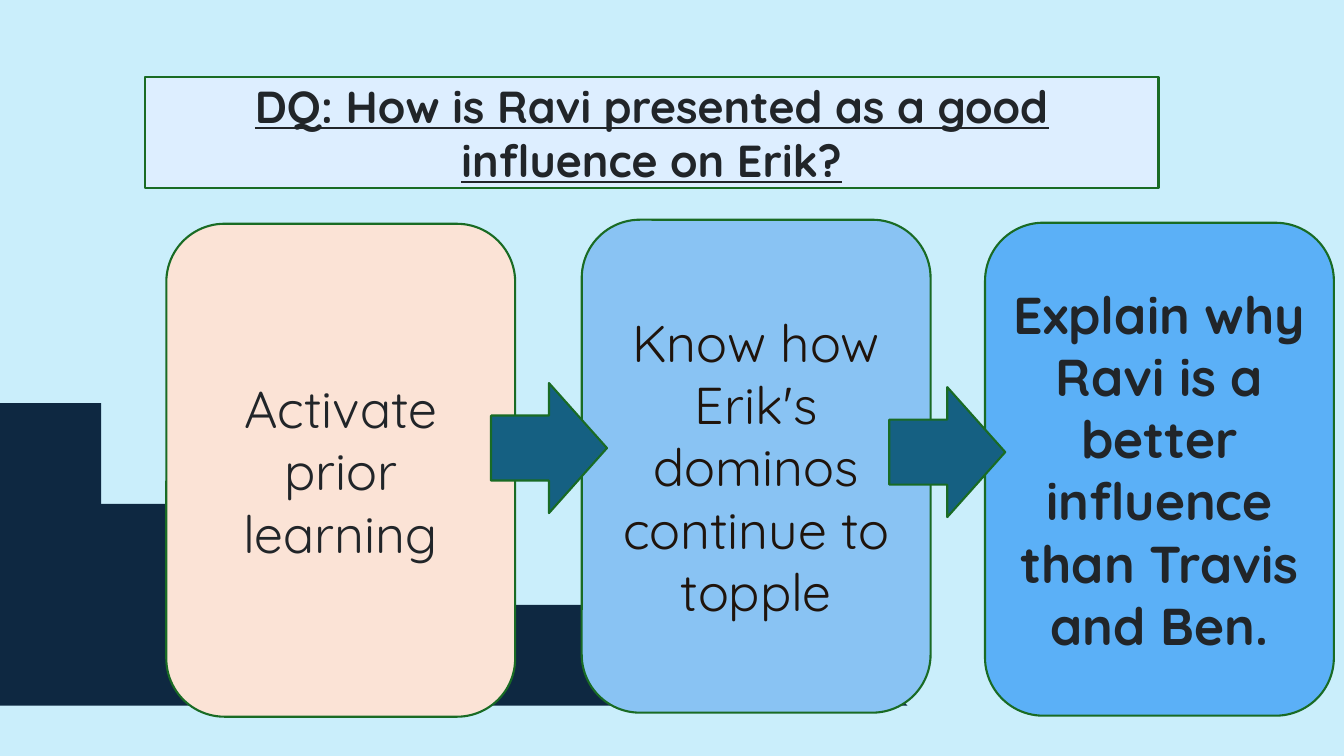
from dataclasses import dataclass

from pptx import Presentation
from pptx.dml.color import RGBColor
from pptx.enum.shapes import MSO_SHAPE
from pptx.enum.text import MSO_ANCHOR, MSO_AUTO_SIZE, PP_ALIGN
from pptx.util import Inches, Pt

ROUNDED, ARROW = MSO_SHAPE.ROUNDED_RECTANGLE, MSO_SHAPE.RIGHT_ARROW
MIDDLE, CENTER, NO_FIT = MSO_ANCHOR.MIDDLE, PP_ALIGN.CENTER, MSO_AUTO_SIZE.NONE
TITLE_ONLY = 5
CURVE_STEPS = 6


@dataclass(frozen=True)
class Theme:
    font: str = "Quicksand"
    title_size: int = 32
    step_size: int = 37
    sky: str = "CAEEFB"
    hill: str = "0E2841"
    outline: str = "196B24"
    arrow: str = "156082"
    title_fill: str = "DDEEFF"
    ink: str = "212529"
    brown_ink: str = "1F140C"
    peach: str = "FBE3D6"
    light_blue: str = "89C3F3"
    blue: str = "5BB0F7"


theme = Theme()


def paint(shape, fill, outlined=True):
    shape.shadow.inherit = False
    shape.fill.solid()
    shape.fill.fore_color.rgb = RGBColor.from_string(fill)
    if outlined:
        shape.line.color.rgb = RGBColor.from_string(theme.outline)
        shape.line.width = Pt(1.5)
    else:
        shape.line.fill.background()


def write(shape, text, size, color, bold):
    frame = shape.text_frame
    frame.text = text
    frame.word_wrap = True
    frame.auto_size = NO_FIT
    frame.vertical_anchor = MIDDLE
    para = frame.paragraphs[0]
    para.alignment = CENTER
    font = para.runs[0].font
    font.name, font.size, font.bold = theme.font, Pt(size), bold
    font.color.rgb = RGBColor.from_string(color)
    return font


deck = Presentation()
deck.slide_width, deck.slide_height = Inches(13.33), Inches(7.5)
page = deck.slides.add_slide(deck.slide_layouts[TITLE_ONLY])
page.background.fill.solid()
page.background.fill.fore_color.rgb = RGBColor.from_string(theme.sky)

# Pairs are straight segments; sextuples are cubic curves.
hill = [
    (-0.3, 4.18), (-0.3, 7.29), (8.53, 7.29), (8.53, 6.64), (7.91, 6.41),
    (7.84, 6.41, 7.74, 6.41, 7.67, 6.36), (7.57, 6.29, 7.21, 6.15, 7.12, 6.09),
    (7.11, 6.08, 7.09, 6.08, 7.06, 6.08), (6.9, 6.08, 6.47, 6.22, 6.31, 6.22),
    (6.04, 6.22, 5.68, 6.24, 5.54, 6.26), (5.49, 6.27),
    (5.32, 6.27, 5, 6.17, 4.85, 6.05), (4.69, 5.91, 4.15, 5.46, 4.05, 5.45),
    (3.95, 5.43, 2.53, 5.31, 2.48, 5.3), (2.44, 5.29, 2.11, 4.88, 1.98, 4.79),
    (1.85, 4.69, 0.05, 4.23, -0.3, 4.18),
]
plant = [
    (0.26, 3.66), (0.25, 3.65, 0.23, 3.63, 0.21, 3.63),
    (0.19, 3.63, 0.17, 3.64, 0.16, 3.66), (0.15, 3.67, 0.15, 3.69, 0.15, 3.74),
    (0.14, 3.9, 0.16, 4.06, 0.21, 4.22), (0.17, 4.15, 0.12, 4.09, 0.05, 4.05),
    (0.03, 4.04, 0.01, 4.03, -0.04, 4.03), (-0.07, 4.05, -0.07, 4.08, -0.06, 4.1),
    (-0.05, 4.2, -0.01, 4.31, 0.06, 4.39), (0.44, 4.45), (0.63, 4.48),
    (0.67, 4.45, 0.72, 4.41, 0.76, 4.37), (0.77, 4.35, 0.79, 4.33, 0.78, 4.31),
    (0.77, 4.3, 0.76, 4.29, 0.74, 4.28), (0.72, 4.28, 0.71, 4.29, 0.69, 4.29),
    (0.62, 4.31, 0.56, 4.34, 0.51, 4.38), (0.56, 4.31, 0.59, 4.22, 0.59, 4.13),
    (0.59, 4.08), (0.58, 4.06, 0.57, 4.05, 0.55, 4.04),
    (0.52, 4.04, 0.51, 4.04, 0.49, 4.04), (0.48, 4.05, 0.46, 4.07, 0.45, 4.08),
    (0.4, 4.14, 0.37, 4.21, 0.36, 4.28), (0.36, 4.18, 0.37, 4.08, 0.36, 3.98),
    (0.35, 3.87, 0.32, 3.77, 0.27, 3.68),
]
stalk = [(0.98, 4.21), (0.92, 4.23), (1.05, 4.57), (1.08, 4.58)]

for outline in (hill, plant, stalk):
    points = [outline[0]]
    for segment in outline[1:]:
        if len(segment) == 2:
            points.append(segment)
            continue
        x0, y0 = points[-1]
        x1, y1, x2, y2, x3, y3 = segment
        for step in range(1, CURVE_STEPS + 1):
            t = step / CURVE_STEPS
            a, b, c, d = (1 - t) ** 3, 3 * t * (1 - t) ** 2, 3 * t * t * (1 - t), t ** 3
            points.append((a * x0 + b * x1 + c * x2 + d * x3,
                           a * y0 + b * y1 + c * y2 + d * y3))
    builder = page.shapes.build_freeform(*points[0], scale=Inches(1))
    builder.add_line_segments(points[1:], close=True)
    paint(builder.convert_to_shape(), theme.hill, outlined=False)

steps = [
    (1.65, 2.22, "Activate prior learning", theme.peach, theme.ink, False),
    (5.77, 2.18, "Know how Erik's dominos continue to topple",
     theme.light_blue, theme.brown_ink, False),
    (9.77, 2.21, "Explain why Ravi is a better influence than Travis and Ben.",
     theme.blue, theme.ink, True),
]
for left, top, text, fill, ink, bold in steps:
    box = page.shapes.add_shape(ROUNDED, Inches(left), Inches(top), Inches(3.46), Inches(4.89))
    paint(box, fill)
    write(box, text, theme.step_size, ink, bold)

for left, top in ((4.87, 3.8), (8.82, 3.84)):
    arrow = page.shapes.add_shape(ARROW, Inches(left), Inches(top), Inches(1.15), Inches(1.29))
    paint(arrow, theme.arrow)

title = page.shapes.title
title.left, title.top = Inches(1.44), Inches(0.76)
title.width, title.height = Inches(10.05), Inches(1.11)
paint(title, theme.title_fill)
title_font = write(title, "DQ: How is Ravi presented as a good influence on Erik?",
                   theme.title_size, theme.ink, True)
title_font.underline = True

deck.save("out.pptx")
